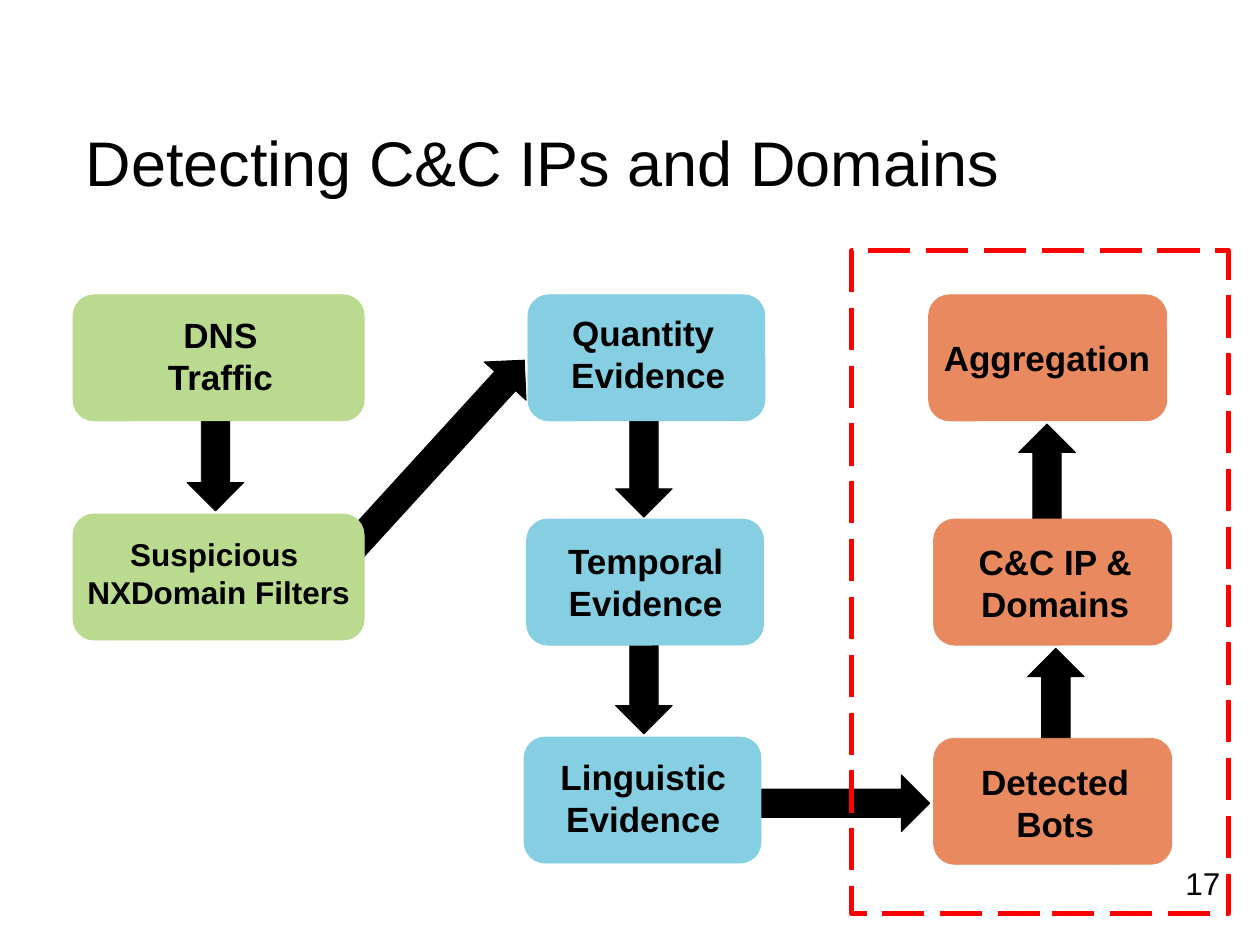
from dataclasses import dataclass, field

from pptx import Presentation, util as u
from pptx.dml.color import RGBColor
from pptx.enum import dml, shapes, text
from pptx.slide import Slide

COLORS = {
    "black": "000000",
    "input": "B9DA8F",
    "evidence": "86CFE2",
    "result": "E98960",
    "focus": "FF0000",
}
COLUMNS, ROWS = 100, 75
ARROW_HEIGHT = 4.5
BOX_HEIGHT = 10


def add_text(frame, content, size, bold=False, color="black", align=text.PP_ALIGN.LEFT,
             spacing=None):
    """Write each line of content as a paragraph."""
    for index, line in enumerate(content.split("\n")):
        para = frame.add_paragraph() if index else frame.paragraphs[0]
        para.alignment = align
        para.line_spacing = spacing
        span = para.add_run()
        span.text = line
        span.font.name = "Arial"
        span.font.size = u.Pt(size)
        span.font.bold = bold
        span.font.color.rgb = RGBColor.from_string(COLORS[color])


@dataclass
class Diagram:
    """Places elements on a page measured in grid columns and rows."""
    page: Slide
    width: int
    height: int
    colors: dict = field(default_factory=lambda: COLORS)

    def grid(self, left, top, width, height):
        column, row = self.width / COLUMNS, self.height / ROWS
        return [round(value) for value in
                (left * column, top * row, width * column, height * row)]

    def title(self, content, *place):
        title = self.page.shapes.title
        title.left, title.top, title.width, title.height = self.grid(*place)
        frame = title.text_frame
        frame.auto_size = text.MSO_AUTO_SIZE.NONE
        frame.vertical_anchor = text.MSO_ANCHOR.MIDDLE
        add_text(frame, content, 36, spacing=0.9)

    def shape(self, kind, place, color, filled=True, line_width=0.5):
        shape = self.page.shapes.add_shape(kind, *self.grid(*place))
        shape.shadow.inherit = False
        rgb = RGBColor.from_string(self.colors[color])
        if filled:
            shape.fill.solid()
            shape.fill.fore_color.rgb = rgb
        else:
            shape.fill.background()
        shape.line.color.rgb = rgb
        shape.line.width = u.Pt(line_width)
        return shape

    def arrow(self, left, top, length, rotation=0):
        arrow = self.shape(shapes.MSO_SHAPE.RIGHT_ARROW,
                           (left, top, length, ARROW_HEIGHT), "black")
        arrow.rotation = rotation

    def frame(self, *place):
        frame = self.shape(shapes.MSO_SHAPE.RECTANGLE, place, "focus",
                           filled=False, line_width=3)
        frame.line.dash_style = dml.MSO_LINE.LONG_DASH

    def label(self, content, place, size, **style):
        label = self.page.shapes.add_textbox(*self.grid(*place))
        label.text_frame.word_wrap = False
        label.text_frame.auto_size = text.MSO_AUTO_SIZE.SHAPE_TO_FIT_TEXT
        add_text(label.text_frame, content, size, **style)

    def step(self, content, color, left, top, width, label_place, size=20):
        self.shape(shapes.MSO_SHAPE.ROUNDED_RECTANGLE,
                   (left, top, width, BOX_HEIGHT), color)
        self.label(content, label_place, size, bold=True, align=text.PP_ALIGN.CENTER)


def main():
    deck = Presentation()
    deck.slide_width, deck.slide_height = u.Inches(10), u.Inches(7.5)
    page = deck.slides.add_slide(deck.slide_layouts[5])
    diagram = Diagram(page, deck.slide_width, deck.slide_height)

    diagram.title("Detecting C&C IPs and Domains", 5.8, 7.8, 91.8, 10.8)

    arrows = [  # left, top, length, rotation
        (78.1, 36.4, 10, 270),
        (78.8, 54.2, 10, 270),
        (58.8, 61.5, 15, 0),
        (46.1, 51, 10, 90),
        (46.1, 33.8, 10, 90),
        (20.6, 35.6, 25.1, 312.4),
        (12.1, 33.3, 10, 90),
    ]
    for arrow in arrows:
        diagram.arrow(*arrow)

    steps = [  # content, colour, left, top, width, label place, text size
        ("DNS\nTraffic", "input", 5.8, 23.4, 23.1, (12.3, 24.4, 10.4, 7.7), 20),
        ("Suspicious \nNXDomain Filters", "input", 5.8, 40.8, 23.1,
         (5.8, 42, 23.1, 7.1), 18),
        ("Quantity \nEvidence", "evidence", 41.9, 23.4, 18.8, (44.3, 24.2, 14.3, 7.7), 20),
        ("Temporal\nEvidence", "evidence", 41.8, 41.2, 18.8, (44.1, 42.3, 14.3, 7.7), 20),
        ("Linguistic \nEvidence", "evidence", 41.6, 58.5, 18.8, (43.4, 59.5, 15.3, 7.7), 20),
        ("Detected\nBots", "result", 74.1, 58.6, 18.9, (76.8, 59.9, 13.9, 7.7), 20),
        ("C&C IP &\nDomains", "result", 74.1, 41.2, 18.9, (76.6, 42.4, 14.3, 7.7), 20),
        ("Aggregation", "result", 73.7, 23.4, 18.9, (73.8, 26.2, 18.6, 4.4), 20),
    ]
    for step in steps:
        diagram.step(*step)

    diagram.frame(67.6, 19.9, 29.9, 52.6)
    diagram.label("17", (93.1, 68.1, 4.8, 4), 18)
    deck.save("out.pptx")


if __name__ == "__main__":
    main()
